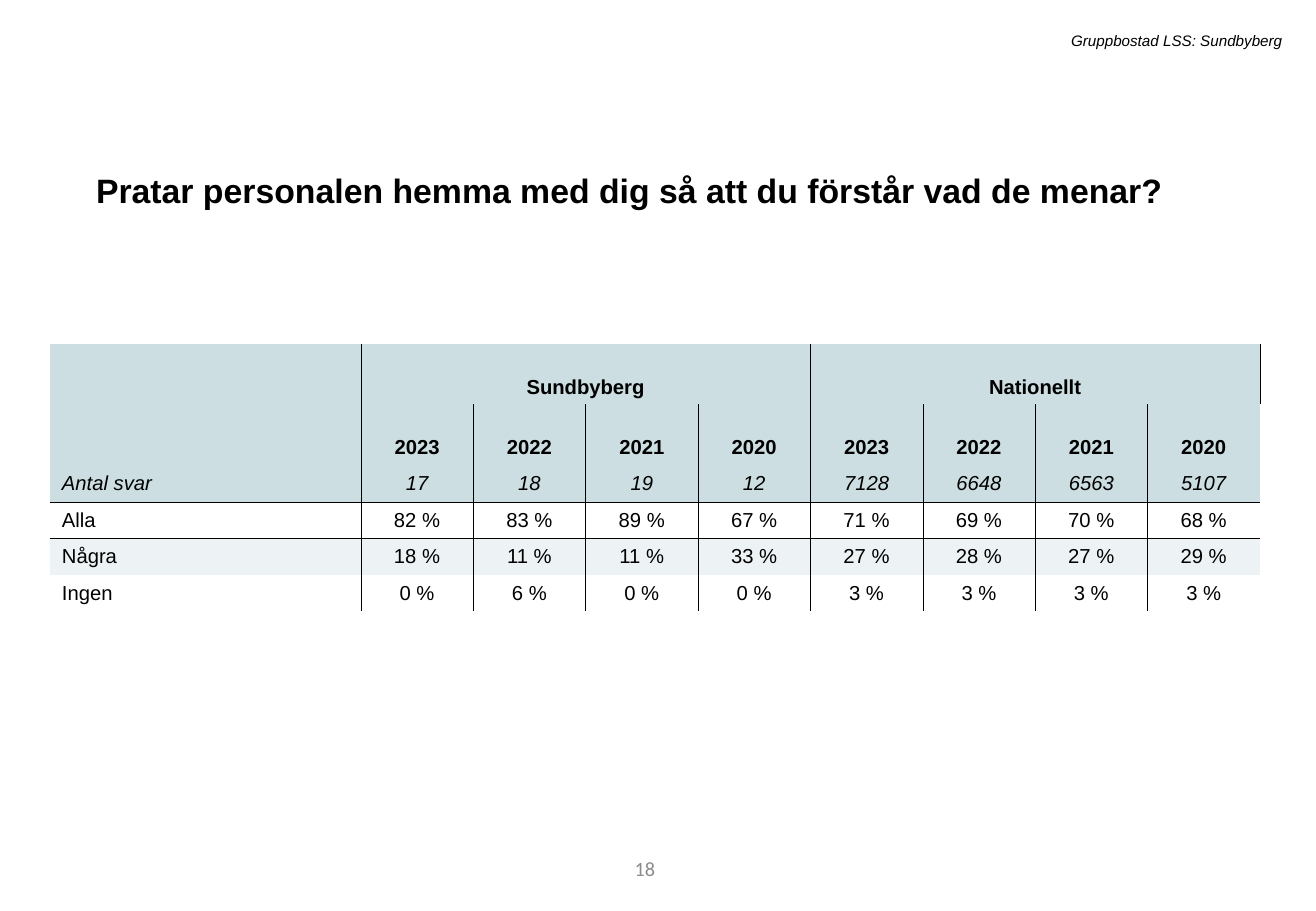
"""Build a survey slide with answers by year for Sundbyberg and the nation."""
from lxml import etree
from pptx import Presentation, util as u
from pptx.dml.color import RGBColor
from pptx.enum import text
from pptx.oxml.ns import qn

TITLE = "Pratar personalen hemma med dig så att du förstår vad de menar?"
SOURCE = "Gruppbostad LSS: Sundbyberg"
PAGE = "18"
GROUPS = ["Sundbyberg", "Nationellt"]
YEARS = ["2023", "2022", "2021", "2020"]
COUNTS = ("Antal svar", [17, 18, 19, 12, 7128, 6648, 6563, 5107])
SHARES = [
    ("Alla", [82, 83, 89, 67, 71, 69, 70, 68]),
    ("Några", [18, 11, 11, 33, 27, 28, 27, 29]),
    ("Ingen", [0, 6, 0, 0, 3, 3, 3, 3]),
]
BLACK, GREY, HEAD, BAND = "000000", "8C8C8C", "CCDEE1", "EDF3F4"
NO_STYLE = "{2D5ABB26-0587-4C30-8999-92F81FD0307C}"
WIDTH, HEIGHT = 10.83, 7.5
LABEL_W, YEAR_W = 2.56, 0.925
HEAD_H, ROW_H = 0.5, 0.3
HEAD_ROWS = 3


def rgb(value):
    return RGBColor.from_string(value)


def style(p, size, align, color=BLACK, name="Arial", bold=False, italic=False):
    p.alignment = align
    f = p.font
    f.size, f.name, f.bold, f.italic = u.Pt(size), name, bold, italic
    f.color.rgb = rgb(color)


def add_text(s, box, words, anchor, **look):
    sp = s.shapes.add_textbox(*(u.Inches(v) for v in box))
    tf = sp.text_frame
    tf.word_wrap, tf.vertical_anchor = True, anchor
    tf.text = words
    style(tf.paragraphs[0], align=text.PP_ALIGN.RIGHT, **look)


def add_borders(cell, sides):
    tc_pr = cell._tc.get_or_add_tcPr()
    for i, side in enumerate(sides):
        ln = etree.Element(qn("a:ln" + side), w=str(u.Pt(0.25)))
        fill = etree.SubElement(ln, qn("a:solidFill"))
        etree.SubElement(fill, qn("a:srgbClr"), val=BLACK)
        tc_pr.insert(i, ln)


def format_cell(cell, row, col, last_col):
    edges = [0, len(YEARS), last_col] if row == 0 else range(last_col)
    sides = [side for side, on in (
        ("L", col - 1 in edges),
        ("R", col in edges or cell.is_merge_origin),
        ("T", row == HEAD_ROWS),
        ("B", row == HEAD_ROWS - 1)) if on]
    if row < HEAD_ROWS or row == HEAD_ROWS + 1:
        cell.fill.solid()
        cell.fill.fore_color.rgb = rgb(HEAD if row < HEAD_ROWS else BAND)
    else:
        cell.fill.background()
    add_borders(cell, sides)
    cell.vertical_anchor = text.MSO_ANCHOR.BOTTOM if row < 2 else text.MSO_ANCHOR.MIDDLE
    style(cell.text_frame.paragraphs[0], 12,
          text.PP_ALIGN.CENTER if col else text.PP_ALIGN.LEFT,
          bold=row < 2, italic=row == 2)


def add_answers(s):
    n = len(YEARS)
    group_row = [""] + [g if i == 0 else "" for g in GROUPS for i in range(n)]
    rows = [group_row, [""] + YEARS * len(GROUPS),
            [COUNTS[0]] + [str(v) for v in COUNTS[1]]]
    rows += [[label] + [f"{v} %" for v in values] for label, values in SHARES]
    widths = [LABEL_W] + [YEAR_W] * (n * len(GROUPS))
    heights = [HEAD_H] * 2 + [ROW_H] * (len(rows) - 2)
    frame = s.shapes.add_table(len(rows), len(widths), u.Inches(0.41), u.Inches(2.83),
                               u.Inches(sum(widths)), u.Inches(sum(heights)))
    table = frame.table
    table.first_row = table.horz_banding = False
    table._tbl.tblPr.find(qn("a:tableStyleId")).text = NO_STYLE
    for column, w in zip(table.columns, widths):
        column.width = u.Inches(w)
    for line, h in zip(table.rows, heights):
        line.height = u.Inches(h)
    for g in range(len(GROUPS)):
        table.cell(0, g * n + 1).merge(table.cell(0, (g + 1) * n))
    for r, values in enumerate(rows):
        for c, value in enumerate(values):
            cell = table.cell(r, c)
            cell.text = value
            format_cell(cell, r, c, len(widths) - 1)


def add_title(s):
    sp = s.shapes.title
    sp.left, sp.top, sp.width, sp.height = (u.Inches(v) for v in (0.69, 1.28, 9.4, 0.47))
    tf = sp.text_frame
    tf.text = TITLE
    tf.word_wrap, tf.auto_size = True, text.MSO_AUTO_SIZE.NONE
    tf.vertical_anchor = text.MSO_ANCHOR.TOP
    p = tf.paragraphs[0]
    p.line_spacing, p.space_before = 1.2, u.Pt(10)
    style(p, 20, text.PP_ALIGN.LEFT, bold=True)


def main():
    prs = Presentation()
    prs.slide_width, prs.slide_height = u.Inches(WIDTH), u.Inches(HEIGHT)
    s = prs.slides.add_slide(prs.slide_layouts[5])
    add_text(s, (3.05, 6.95, 2.44, 0.4), PAGE, text.MSO_ANCHOR.MIDDLE,
             size=12, color=GREY, name="Calibri")
    add_title(s)
    add_answers(s)
    add_text(s, (1.79, 0.21, 8.86, 0.25), SOURCE, text.MSO_ANCHOR.TOP,
             size=9, italic=True)
    prs.save("out.pptx")


if __name__ == "__main__":
    main()
